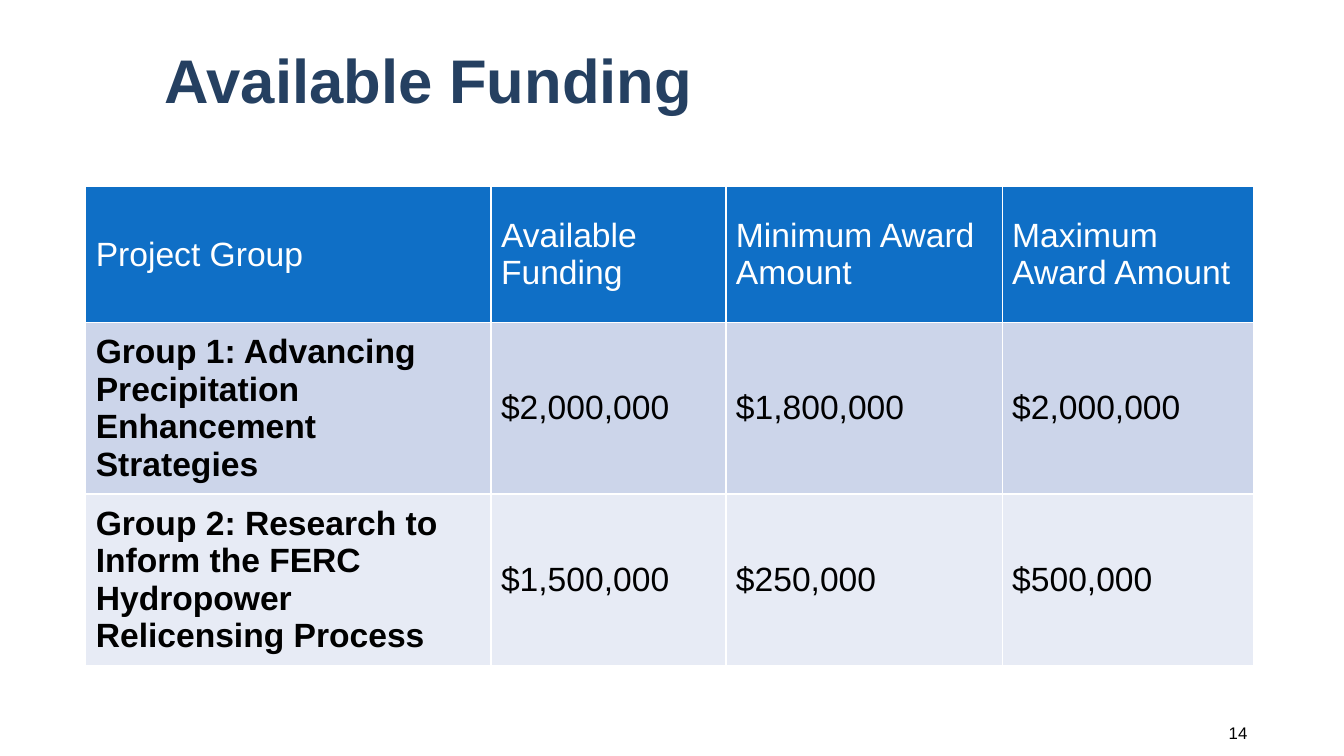
from lxml.etree import SubElement
from pptx import Presentation
from pptx.dml.color import RGBColor
from pptx.enum.text import MSO_ANCHOR as ANCHOR, MSO_AUTO_SIZE as AUTO, PP_ALIGN as ALIGN
from pptx.oxml.ns import qn
from pptx.util import Inches, Pt

NAVY = RGBColor(0x25, 0x40, 0x61)
BLUE = RGBColor(0x0F, 0x6F, 0xC6)
BAND_DARK = RGBColor(0xCC, 0xD5, 0xEA)
BAND_LIGHT = RGBColor(0xE7, 0xEB, 0xF5)
WHITE = RGBColor(0xFF, 0xFF, 0xFF)
BLACK = RGBColor(0, 0, 0)

COL_WIDTHS = [4.02, 2.33, 2.74, 2.49]
ROW_HEIGHTS = [1.35, 1.59, 1.59]
ROW_FILLS = [BLUE, BAND_DARK, BAND_LIGHT]
FUNDING = [
    ["Project Group", "Available Funding", "Minimum Award Amount", "Maximum Award Amount"],
    ["Group 1: Advancing Precipitation Enhancement Strategies",
     "$2,000,000", "$1,800,000", "$2,000,000"],
    ["Group 2: Research to Inform the FERC Hydropower Relicensing Process",
     "$1,500,000", "$250,000", "$500,000"],
]


def write(tf, text, size=24, color=BLACK, bold=False, align=ALIGN.LEFT, spacing=1.0):
    tf.word_wrap = True
    p = tf.paragraphs[0]
    p.alignment = align
    p.line_spacing = spacing
    r = p.add_run()
    r.text = text
    r.font.name = "Arial"
    r.font.size = Pt(size)
    r.font.bold = bold
    r.font.color.rgb = color


def set_borders(cell, color=WHITE, width=1):
    tcPr = cell._tc.get_or_add_tcPr()
    for i, side in enumerate(("a:lnL", "a:lnR", "a:lnT", "a:lnB")):
        ln = tcPr.makeelement(qn(side), {"w": str(Pt(width))})
        fill = SubElement(ln, qn("a:solidFill"))
        SubElement(fill, qn("a:srgbClr"), val=str(color))
        tcPr.insert(i, ln)


def add_title(s, x, y, w, h):
    sp = s.shapes.title
    sp.left, sp.top, sp.width, sp.height = map(Inches, (x, y, w, h))
    tf = sp.text_frame
    tf.auto_size = AUTO.NONE
    tf.vertical_anchor = ANCHOR.MIDDLE
    write(tf, "Available Funding", size=44, color=NAVY, bold=True, spacing=0.9)


def add_funding_table(s, x, y):
    box = map(Inches, (x, y, sum(COL_WIDTHS), sum(ROW_HEIGHTS)))
    table = s.shapes.add_table(len(ROW_HEIGHTS), len(COL_WIDTHS), *box).table
    for col, width in zip(table.columns, COL_WIDTHS):
        col.width = Inches(width)
    for i, (row, height) in enumerate(zip(table.rows, ROW_HEIGHTS)):
        row.height = Inches(height)
        for j, cell in enumerate(row.cells):
            cell.fill.solid()
            cell.fill.fore_color.rgb = ROW_FILLS[i]
            cell.vertical_anchor = ANCHOR.MIDDLE
            set_borders(cell)
            write(cell.text_frame, FUNDING[i][j],
                  color=WHITE if i == 0 else BLACK, bold=i > 0 and j == 0)


def add_page_number(s, x, y, w, h):
    tf = s.shapes.add_textbox(*map(Inches, (x, y, w, h))).text_frame
    tf.vertical_anchor = ANCHOR.MIDDLE
    write(tf, "14", size=12, align=ALIGN.RIGHT)


def main():
    prs = Presentation()
    prs.slide_width, prs.slide_height = Inches(13.33), Inches(7.5)
    s = prs.slides.add_slide(prs.slide_layouts[5])
    add_title(s, 1.53, 0.26, 10.89, 1.14)
    add_page_number(s, 10.5, 7.07, 1.97, 0.4)
    add_funding_table(s, 0.85, 1.85)
    prs.save("out.pptx")


if __name__ == "__main__":
    main()
